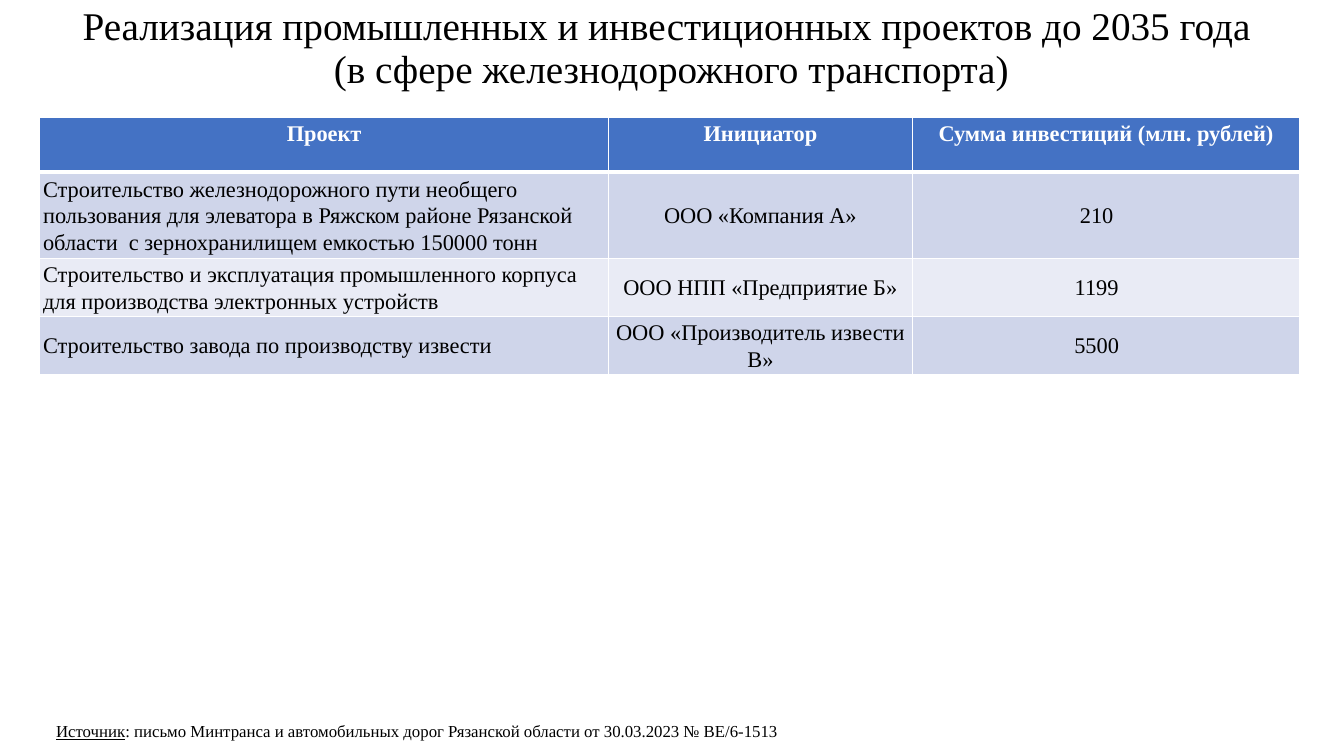
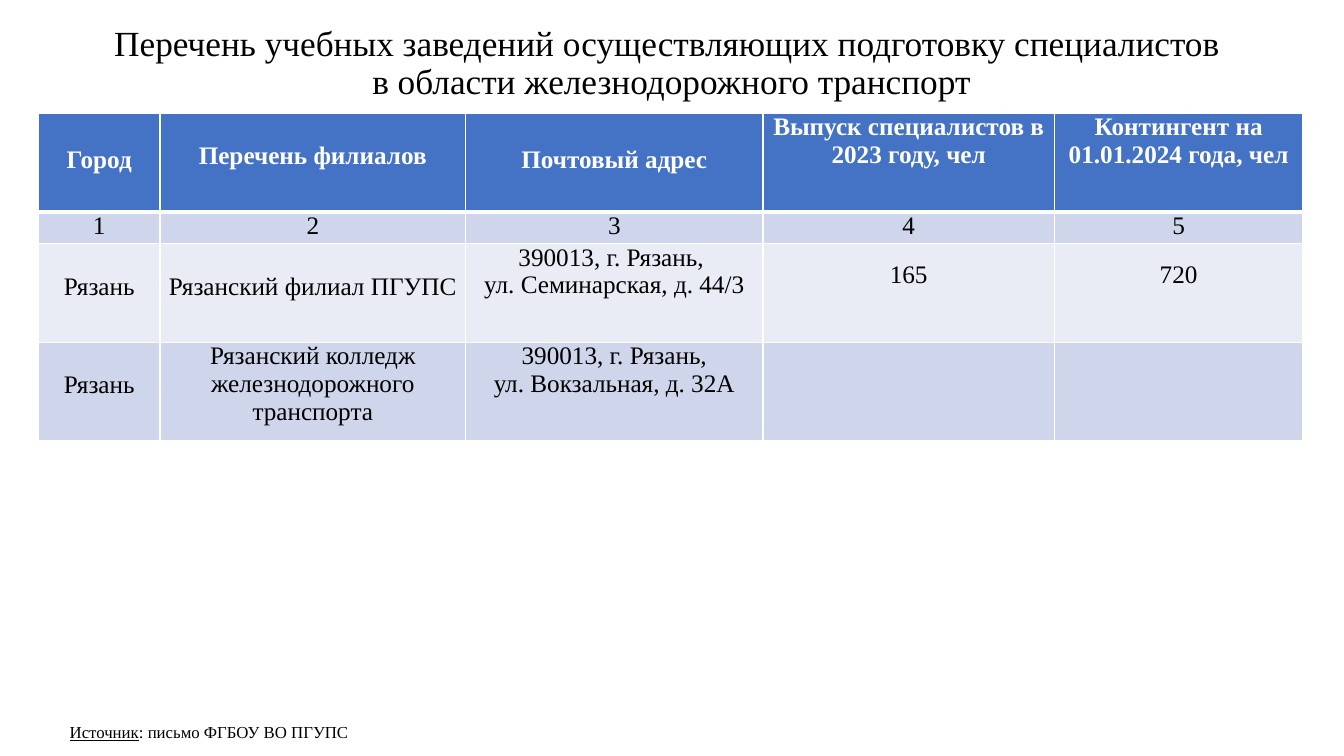
from lxml import etree
from pptx import Presentation
from pptx.dml.color import RGBColor
from pptx.enum.text import MSO_ANCHOR, MSO_AUTO_SIZE, PP_ALIGN
from pptx.oxml.ns import qn
from pptx.util import Pt

LEFT, CENTER = PP_ALIGN.LEFT, PP_ALIGN.CENTER
TOP, MIDDLE = MSO_ANCHOR.TOP, MSO_ANCHOR.MIDDLE
NO_AUTOFIT = MSO_AUTO_SIZE.NONE

BLACK = RGBColor(0x00, 0x00, 0x00)
WHITE = RGBColor(0xFF, 0xFF, 0xFF)
HEADER_BLUE = RGBColor(0x44, 0x72, 0xC4)
BAND_DARK = RGBColor(0xCF, 0xD5, 0xEA)
BAND_LIGHT = RGBColor(0xE9, 0xEB, 0xF5)

FONT = "Times New Roman"
TITLE_ONLY = 5
THIN, THICK = 1, 3

PROJECTS = [
    ["Проект", "Инициатор", "Сумма инвестиций (млн. рублей)"],
    ["Строительство железнодорожного пути необщего пользования для элеватора "
     "в Ряжском районе Рязанской области  с зернохранилищем емкостью 150000 тонн",
     "ООО «Компания А»", "210"],
    ["Строительство и эксплуатация промышленного корпуса для производства "
     "электронных устройств", "ООО НПП «Предприятие Б»", "1199"],
    ["Строительство завода по производству извести",
     "ООО «Производитель извести В»", "5500"],
]

SCHOOLS = [
    ["Город", "Перечень филиалов", "Почтовый адрес",
     "Выпуск специалистов в 2023 году, чел", "Контингент на 01.01.2024 года, чел"],
    ["1", "2", "3", "4", "5"],
    ["Рязань", "Рязанский филиал ПГУПС",
     "390013, г. Рязань, \vул. Семинарская, д. 44/3", "165", "720"],
    ["Рязань", "Рязанский колледж железнодорожного транспорта",
     "390013, г. Рязань,\nул. Вокзальная, д. 32А", "", ""],
]
# Top margin of each cell of the schools table
SCHOOL_DROPS = [
    [23, 20.7, 23, 0, 0],
    [0, 0, 0, 0, 0],
    [20.7, 20.7, 0, 12.6, 12.6],
    [20.7, 0, 0, 0, 0],
]


def style_font(font, size, color, bold=False):
    font.name = FONT
    font.size = Pt(size)
    font.color.rgb = color
    font.bold = bold


def add_titled_slide(prs, text, box, size):
    slide = prs.slides.add_slide(prs.slide_layouts[TITLE_ONLY])
    title = slide.shapes.title
    title.left, title.top, title.width, title.height = map(Pt, box)
    frame = title.text_frame
    frame.text = text
    frame.auto_size = NO_AUTOFIT
    frame.word_wrap = True
    frame.vertical_anchor = MIDDLE
    paragraph = frame.paragraphs[0]
    paragraph.alignment = CENTER
    paragraph.line_spacing = 0.9
    for run in paragraph.runs:
        style_font(run.font, size, BLACK)
    return slide


def add_source(slide, text, left, top, width):
    """Add the footer line with its underlined lead word."""
    frame = slide.shapes.add_textbox(Pt(left), Pt(top), Pt(width), Pt(21.6)).text_frame
    frame.word_wrap = True
    paragraph = frame.paragraphs[0]
    for part, underlined in (("Источник", True), (": " + text, False)):
        run = paragraph.add_run()
        run.text = part
        style_font(run.font, 12, BLACK)
        run.font.underline = underlined


def set_borders(cell, row):
    """Draw white borders, thick between the header and the first body row."""
    widths = {"a:lnL": THIN, "a:lnR": THIN,
              "a:lnT": THICK if row == 1 else THIN,
              "a:lnB": THICK if row == 0 else THIN}
    properties = cell._tc.get_or_add_tcPr()
    for tag, width in widths.items():
        line = etree.SubElement(properties, qn(tag), w=str(Pt(width)))
        fill = etree.SubElement(line, qn("a:solidFill"))
        etree.SubElement(fill, qn("a:srgbClr"), val=str(WHITE))


def set_margins(cell, left, top, right, bottom):
    cell.margin_left, cell.margin_top = Pt(left), Pt(top)
    cell.margin_right, cell.margin_bottom = Pt(right), Pt(bottom)


def add_banded_table(slide, rows, left, top, widths, heights, size):
    table = slide.shapes.add_table(len(rows), len(widths), Pt(left), Pt(top),
                                   Pt(sum(widths)), Pt(sum(heights))).table
    for column, width in zip(table.columns, widths):
        column.width = Pt(width)
    for row, (texts, height) in enumerate(zip(rows, heights)):
        table.rows[row].height = Pt(height)
        header = row == 0
        band = HEADER_BLUE if header else BAND_DARK if row % 2 else BAND_LIGHT
        for col, text in enumerate(texts):
            cell = table.cell(row, col)
            set_borders(cell, row)
            cell.fill.solid()
            cell.fill.fore_color.rgb = band
            cell.vertical_anchor = TOP
            cell.text_frame.text = text
            for paragraph in cell.text_frame.paragraphs:
                paragraph.alignment = CENTER
                for run in paragraph.runs:
                    style_font(run.font, size, WHITE if header else BLACK, header)
    return table


def build_projects_slide(prs):
    slide = add_titled_slide(
        prs, "Реализация промышленных и инвестиционных проектов до 2035 года "
             "\v(в сфере железнодорожного транспорта)", (33, 13, 893, 44.5), 28)
    add_source(slide, "письмо Минтранса и автомобильных дорог Рязанской области "
                      "от 30.03.2023 № ВЕ/6-1513", 33, 511.5, 750)
    table = add_banded_table(slide, PROJECTS, 28.3, 83.5, (406.5, 216.8, 277),
                             (39.5, 61, 41.5, 41.5), 16)
    for row in range(1, len(PROJECTS)):
        for col in range(len(PROJECTS[0])):
            cell = table.cell(row, col)
            cell.vertical_anchor = MIDDLE
            set_margins(cell, 2.5, 0, 16 if col == 2 else 2.5, 0)
            paragraph = cell.text_frame.paragraphs[0]
            paragraph.alignment = CENTER if col else LEFT
            paragraph.line_spacing = 1.07


def build_schools_slide(prs):
    slide = add_titled_slide(
        prs, "Перечень учебных заведений осуществляющих подготовку специалистов "
             "\vв области железнодорожного транспорт", (57.5, 26, 844.5, 39), 25.2)
    table = add_banded_table(slide, SCHOOLS, 27.5, 81, (86.8, 218.3, 212.4, 208.2, 177.5),
                             (70.5, 22.5, 70.5, 70.5), 18)
    for row, drops in enumerate(SCHOOL_DROPS):
        for col, drop in enumerate(drops):
            set_margins(table.cell(row, col), 5, drop, 5, 0)
    add_source(slide, "письмо ФГБОУ ВО ПГУПС", 42.7, 512, 456)


def main():
    prs = Presentation()
    prs.slide_width, prs.slide_height = Pt(960), Pt(540)
    build_projects_slide(prs)
    build_schools_slide(prs)
    prs.save("out.pptx")


if __name__ == "__main__":
    main()
